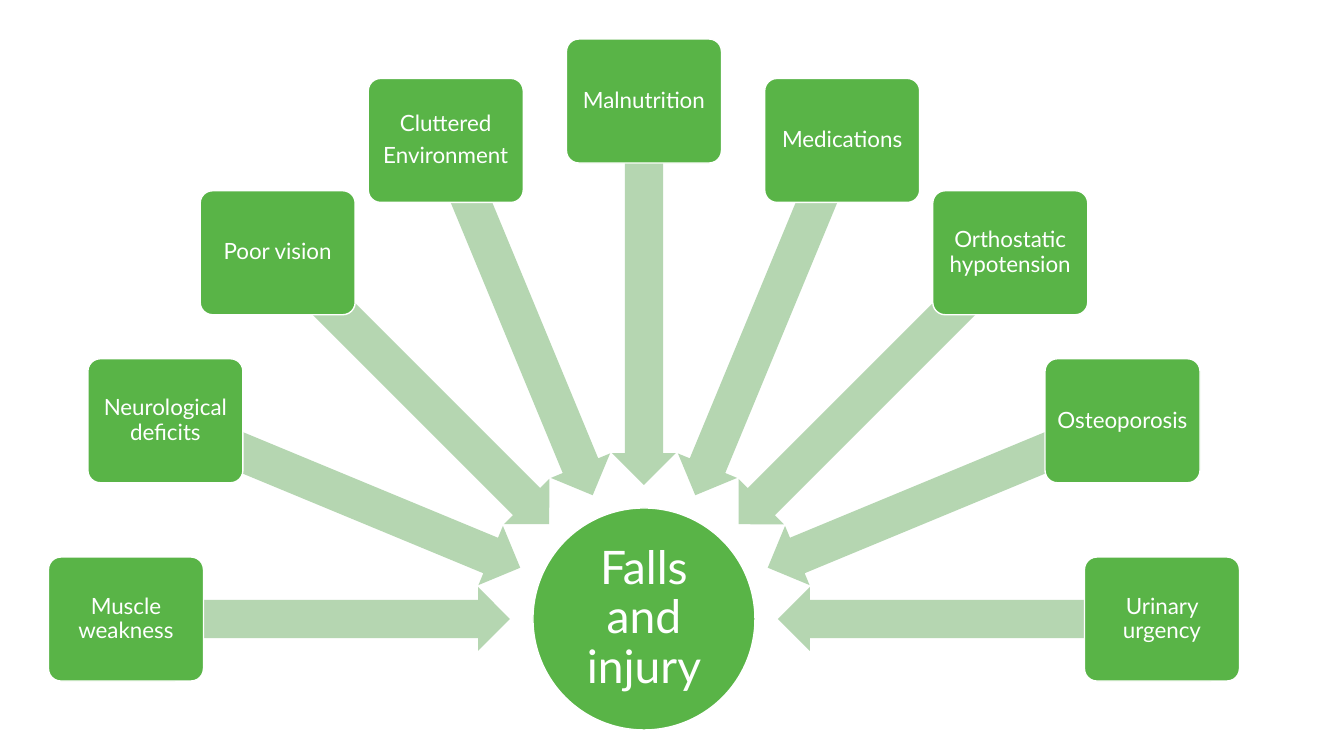
from math import cos, radians, sin

from pptx import Presentation
from pptx.dml.color import RGBColor
from pptx.enum.shapes import MSO_SHAPE
from pptx.enum.text import MSO_ANCHOR, PP_ALIGN
from pptx.util import Pt

ELLIPSE = MSO_SHAPE.OVAL
BOX = MSO_SHAPE.ROUNDED_RECTANGLE
ARROW = MSO_SHAPE.LEFT_ARROW
MIDDLE = MSO_ANCHOR.MIDDLE
CENTER = PP_ALIGN.CENTER

# Content: the outcome and its causes, clockwise from the left
OUTCOME = ["Falls and injury"]
CAUSES = [
    ["Muscle weakness"],
    ["Neurological deficits"],
    ["Poor vision"],
    ["Cluttered", "Environment"],
    ["Malnutrition"],
    ["Medications"],
    ["Orthostatic hypotension"],
    ["Osteoporosis"],
    ["Urinary urgency"],
]

COLORS = {"green": "59B447", "pale": "B5D6B1", "white": "FFFFFF"}
FONT = "Lato"

# Geometry in px, 100.8 px to the inch
EMU_PER_PX = 914400 / 100.8
SLIDE_SIZE = (1344, 756)
HUB = (644, 619)
HUB_SIZE = (222, 222)
BOX_SIZE = (155, 124)
ARROW_SIZE = (384, 64)
BOX_RADIUS = 518
ARROW_RADIUS = 326


def px(value):
    return round(value * EMU_PER_PX)


def add_part(slide, kind, size, fill, angle=0, radius=0, outlined=True):
    """Add a shape centred at the given angle and radius from the hub."""
    width, height = size
    center_x = HUB[0] + radius * cos(radians(angle))
    center_y = HUB[1] + radius * sin(radians(angle))
    shape = slide.shapes.add_shape(
        kind, px(center_x - width / 2), px(center_y - height / 2), px(width), px(height))
    shape.shadow.inherit = False
    shape.fill.solid()
    shape.fill.fore_color.rgb = RGBColor.from_string(COLORS[fill])
    if outlined:
        shape.line.color.rgb = RGBColor.from_string(COLORS["white"])
        shape.line.width = Pt(1)
    else:
        shape.line.fill.background()
    return shape


def write(shape, lines, size, inset):
    frame = shape.text_frame
    frame.word_wrap = True
    frame.vertical_anchor = MIDDLE
    frame.margin_left = frame.margin_right = px(inset)
    frame.margin_top = frame.margin_bottom = px(inset)
    for index, line in enumerate(lines):
        paragraph = frame.add_paragraph() if index else frame.paragraphs[0]
        paragraph.text = line
        paragraph.alignment = CENTER
        paragraph.line_spacing = 0.9
        paragraph.space_after = Pt(0.35 * size)
        paragraph.font.name = FONT
        paragraph.font.size = Pt(size)
        paragraph.font.color.rgb = RGBColor.from_string(COLORS["white"])


def main():
    presentation = Presentation()
    presentation.slide_width, presentation.slide_height = map(px, SLIDE_SIZE)
    slide = presentation.slides.add_slide(presentation.slide_layouts[6])

    # Outcome in the hub
    hub = add_part(slide, ELLIPSE, HUB_SIZE, "green")
    write(hub, OUTCOME, 33, 2)

    # Causes fanned over a half circle, each with an arrow to the hub
    step = 180 / (len(CAUSES) - 1)
    for index, cause in enumerate(CAUSES):
        angle = 180 + index * step
        arrow = add_part(slide, ARROW, ARROW_SIZE, "pale", angle, ARROW_RADIUS, outlined=False)
        arrow.rotation = angle
        arrow.adjustments[0] = 0.6
        arrow.adjustments[1] = 0.5
        box = add_part(slide, BOX, BOX_SIZE, "green", angle, BOX_RADIUS)
        box.adjustments[0] = 0.1
        write(box, cause, 16, 3)

    presentation.save("out.pptx")


if __name__ == "__main__":
    main()
